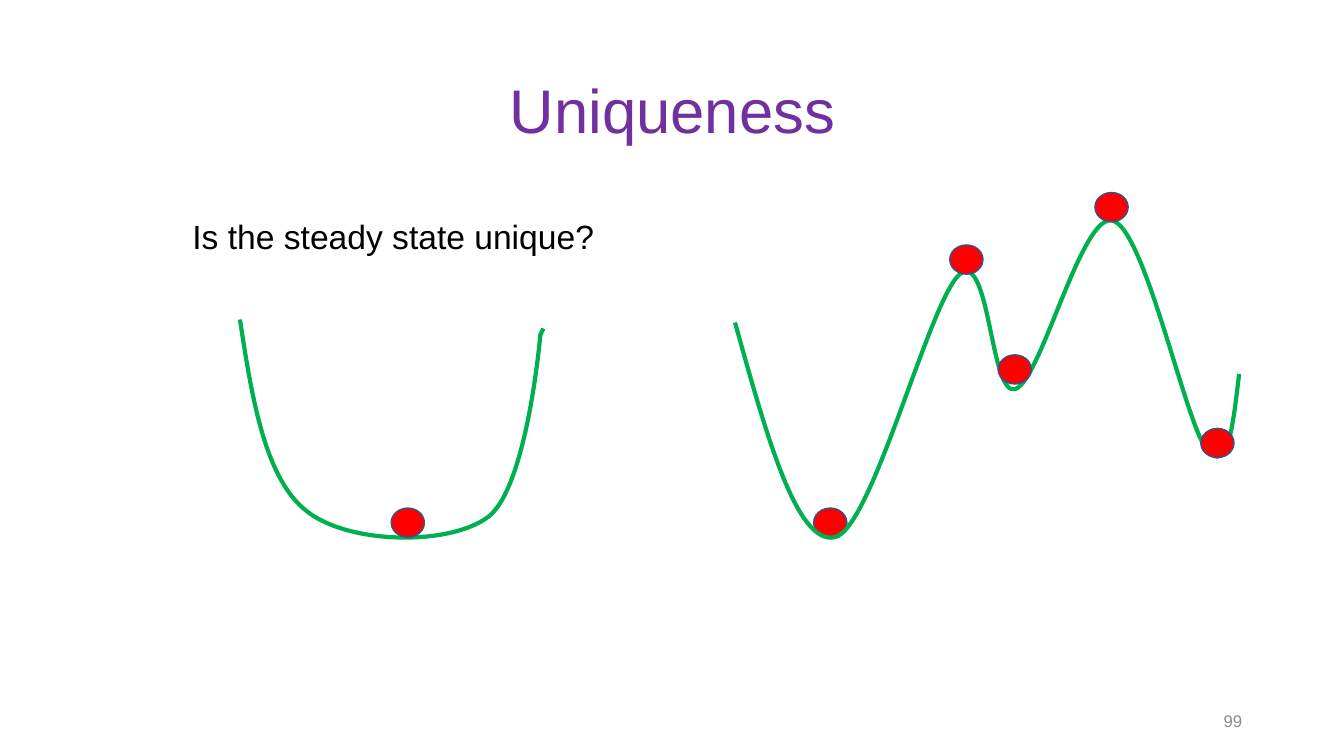
from lxml import etree
from pptx import Presentation
from pptx.dml.color import RGBColor
from pptx.enum.shapes import MSO_SHAPE
from pptx.enum.text import MSO_ANCHOR, PP_ALIGN
from pptx.oxml.ns import qn
from pptx.util import Emu, Pt

EMU_PER_PX = 9144  # 100 px to the inch
OVAL = MSO_SHAPE.OVAL
TOP, MIDDLE = MSO_ANCHOR.TOP, MSO_ANCHOR.MIDDLE
LEFT, CENTER, RIGHT = PP_ALIGN.LEFT, PP_ALIGN.CENTER, PP_ALIGN.RIGHT
TITLE_ONLY = 5


def px(length):
    return Emu(length * EMU_PER_PX)


def color(hex_string):
    return RGBColor.from_string(hex_string)


def write_text(shape, text, size, hex_color, font="Arial", align=LEFT,
               anchor=TOP, spacing=1.0):
    frame = shape.text_frame
    frame.word_wrap = True
    frame.vertical_anchor = anchor
    paragraph = frame.paragraphs[0]
    paragraph.alignment = align
    paragraph.line_spacing = spacing
    run = paragraph.add_run()
    run.text = text
    run.font.name = font
    run.font.size = Pt(size)
    run.font.color.rgb = color(hex_color)


class SlideBuilder:
    title_color = "7030A0"
    curve_color = "00B050"
    ball_fill, ball_line = "FF0000", "325491"
    ball_width, ball_height = 33, 29

    def __init__(self, presentation):
        self.slide = presentation.slides.add_slide(presentation.slide_layouts[TITLE_ONLY])
        self.shapes = self.slide.shapes

    def place(self, shape, left, top, width, height):
        shape.left, shape.top = px(left), px(top)
        shape.width, shape.height = px(width), px(height)

    def title(self, text, *box):
        shape = self.shapes.title
        self.place(shape, *box)
        write_text(shape, text, 44, self.title_color, align=CENTER, anchor=MIDDLE, spacing=0.9)

    def text(self, text, *box, **text_format):
        shape = self.shapes.add_textbox(*map(px, box))
        write_text(shape, text, **text_format)

    def curve(self, box, start, segments):
        """Draw segments of one point (straight) or three points (cubic)."""
        left, top, width, height = box
        builder = self.shapes.build_freeform(*start, scale=EMU_PER_PX)
        builder.add_line_segments([segment[-1] for segment in segments], close=False)
        shape = builder.convert_to_shape()
        self.place(shape, *box)

        # Give the outline its cubic segments, measured from the box corner
        outline = next(shape.element.iter(qn("a:path")))
        outline.set("w", str(px(width)))
        outline.set("h", str(px(height)))
        for command in list(outline):
            outline.remove(command)
        for points in [[start]] + segments:
            tag = "a:moveTo" if points == [start] else "a:cubicBezTo" if len(points) == 3 else "a:lnTo"
            command = etree.SubElement(outline, qn(tag))
            for x, y in points:
                etree.SubElement(command, qn("a:pt"), x=str(px(x - left)), y=str(px(y - top)))

        shape.shadow.inherit = False
        shape.fill.background()
        shape.line.color.rgb = color(self.curve_color)
        shape.line.width = Pt(3)

    def ball(self, left, top):
        shape = self.shapes.add_shape(OVAL, px(left), px(top), px(self.ball_width), px(self.ball_height))
        shape.shadow.inherit = False
        shape.fill.solid()
        shape.fill.fore_color.rgb = color(self.ball_fill)
        shape.line.color.rgb = color(self.ball_line)
        shape.line.width = Pt(1)


def main():
    presentation = Presentation()
    presentation.slide_width, presentation.slide_height = px(1333), px(750)
    builder = SlideBuilder(presentation)

    # Title, page number and question
    builder.title("Uniqueness", 92, 40, 1150, 145)
    builder.text("99", 942, 695, 300, 40, size=12, hex_color="8C8C8C", align=RIGHT, anchor=MIDDLE)
    builder.text("Is the steady state unique?", 181, 189, 942, 63,
                 size=24, hex_color="000000", spacing=1.5)

    # Single valley with one steady state
    builder.curve((238, 317, 301, 216), (238, 317), [
        [(250, 396), (263, 475), (304, 507)],
        [(345, 540), (445, 542), (484, 513)],
        [(523, 484), (536, 332), (536, 332)],
        [(539, 326)],
    ])
    builder.ball(388, 504)

    # Landscape with several steady states; its first ball lies behind the curve
    builder.ball(807, 504)
    builder.curve((729, 218, 500, 315), (729, 320), [
        [(760, 431), (790, 541), (828, 533)],
        [(865, 525), (922, 297), (952, 272)],
        [(982, 248), (982, 394), (1007, 386)],
        [(1033, 377), (1073, 209), (1104, 219)],
        [(1136, 229), (1176, 421), (1197, 446)],
        [(1218, 472), (1223, 421), (1229, 371)],
    ])
    for left, top in ((942, 243), (990, 352), (1191, 425), (1086, 191)):
        builder.ball(left, top)

    presentation.save("out.pptx")


if __name__ == "__main__":
    main()
